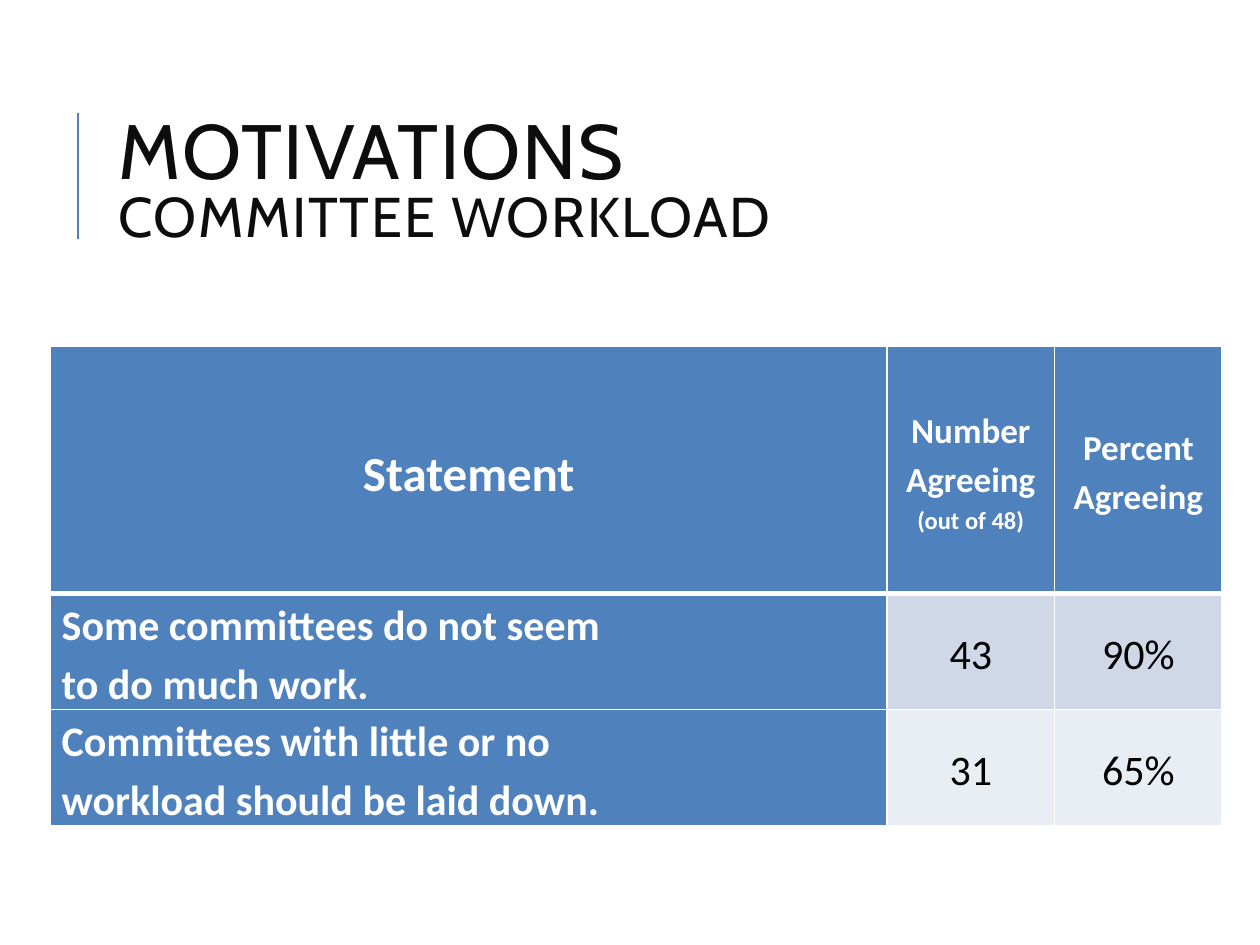
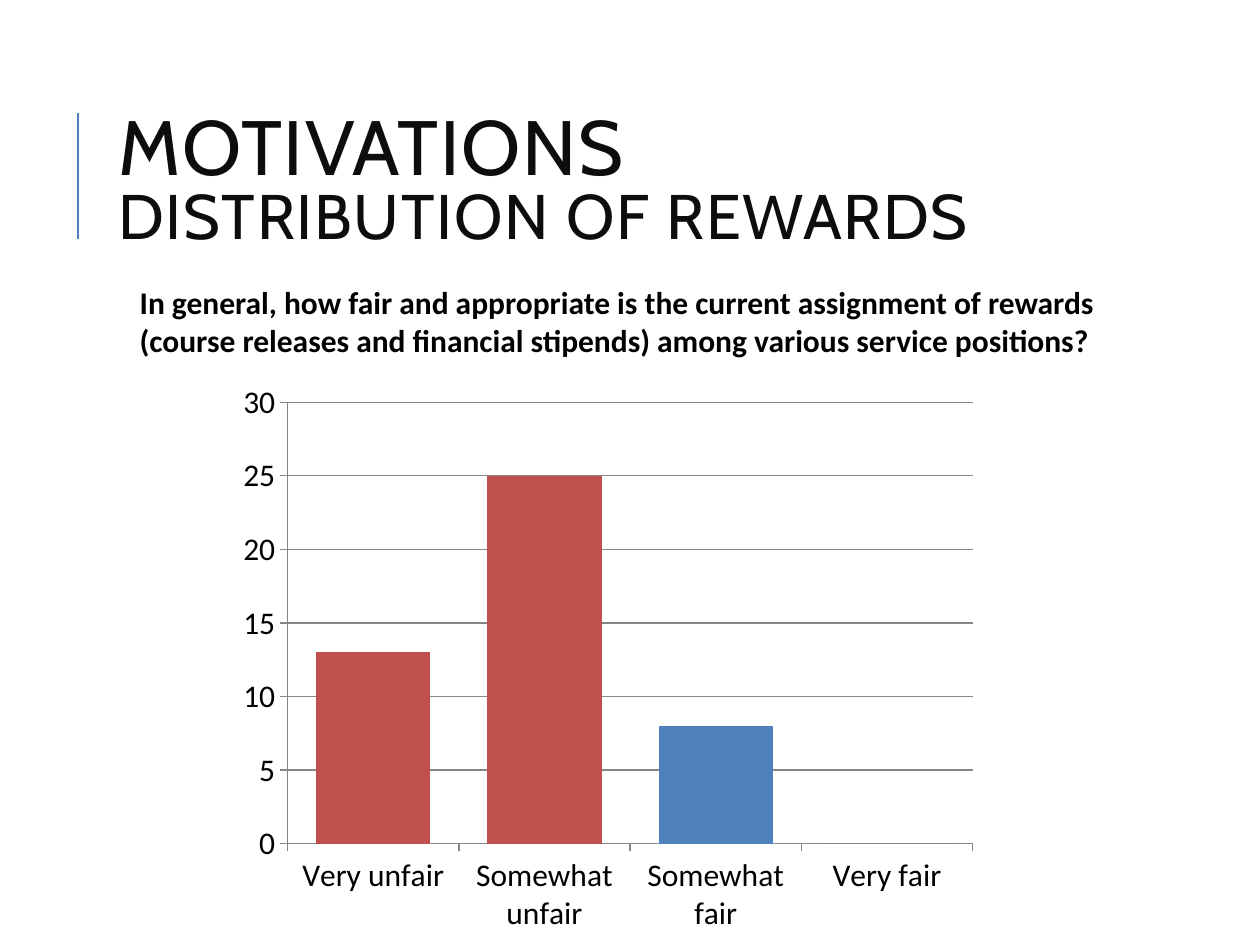
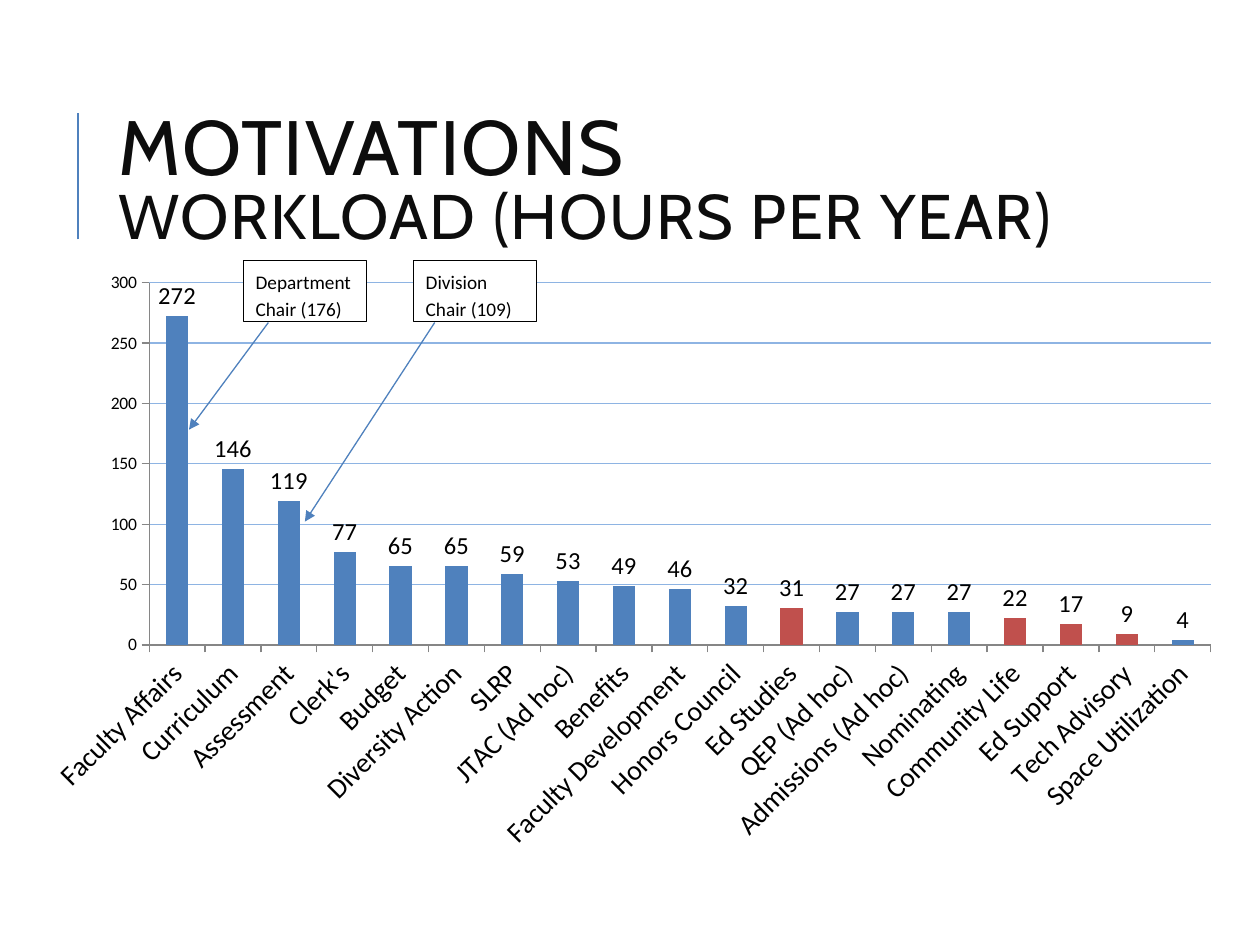
from lxml import etree
from pptx import Presentation
from pptx.chart.data import CategoryChartData
from pptx.dml.color import RGBColor
from pptx.enum import chart as ch, shapes as sh, text as tx
from pptx.oxml.ns import qn
from pptx.util import Inches, Pt

BLUE = RGBColor(0x4F, 0x81, 0xBD)
RED = RGBColor(0xC0, 0x50, 0x4D)
GRID = RGBColor(0x8E, 0xB4, 0xE3)
GRAY = RGBColor(0x86, 0x86, 0x86)
INK = RGBColor(0x0D, 0x0D, 0x0D)
BLACK = RGBColor(0, 0, 0)
WHITE = RGBColor(0xFF, 0xFF, 0xFF)
BANDS = [RGBColor(0xD0, 0xD8, 0xE8), RGBColor(0xE9, 0xED, 0xF4)]


def write(par, text, size, color=BLACK, bold=False, face="Calibri"):
    run = par.add_run()
    run.text = text
    font = run.font
    font.size, font.bold, font.name = Pt(size), bold, face
    font.color.rgb = color
    return run


def join(slide, start, end, width):
    """Draw a straight blue line without a shadow."""
    line = slide.shapes.add_connector(
        sh.MSO_CONNECTOR.STRAIGHT, *map(Inches, start + end))
    line.line.color.rgb = BLUE
    line.line.width = Pt(width)
    etree.SubElement(line._element.spPr, qn("a:effectLst"))
    return line


prs = Presentation()
prs.slide_width, prs.slide_height = Inches(10), Inches(7.5)

# Shared title and rule
slides = []
for topic, size in [("COMMITTEE WORKLOAD", 32),
                    ("DISTRIBUTION OF REWARDS", 36),
                    ("WORKLOAD (HOURS PER YEAR)", 36)]:
    slide = prs.slides.add_slide(prs.slide_layouts[6])
    join(slide, (0.62, 1.9), (0.62, 0.9), 1.5)
    box = slide.shapes.add_textbox(
        Inches(0.84), Inches(0.64), Inches(7.97), Inches(1.64))
    frame = box.text_frame
    frame.word_wrap = True
    frame.vertical_anchor = tx.MSO_ANCHOR.MIDDLE
    par = frame.paragraphs[0]
    par.line_spacing = 0.8
    head = write(par, "MOTIVATIONS", 44, INK, face="Cabin")
    par.add_line_break()
    tail = write(par, topic, size, INK, face="Cabin")
    for run in (head, tail):
        run.font._element.set("spc", "100")
    slides.append(slide)
work, fair, hours = slides

# Table of statements: each cell is a list of paragraphs, each a list of runs
rows = [
    [[[("Statement", 28)]],
     [[("Number Agreeing ", 20), ("(out of 48)", 14)]],
     [[("Percent Agreeing", 20)]]],
    [[[("Some committees do not seem", 24)], [("to do much work.", 24)]],
     [[("43", 24)]], [[("90%", 24)]]],
    [[[("Committees with little or no", 24)],
      [("workload should be laid down.", 24)]],
     [[("31", 24)]], [[("65%", 24)]]],
]
table = work.shapes.add_table(
    3, 3, Inches(0.4), Inches(2.75), Inches(9.3), Inches(3.8)).table
for col, width in zip(table.columns, (6.64, 1.33, 1.33)):
    col.width = Inches(width)
for row, height in zip(table.rows, (1.96, 0.92, 0.92)):
    row.height = Inches(height)
for r, row in enumerate(rows):
    for c, pars in enumerate(row):
        cell = table.cell(r, c)
        label = r == 0 or c == 0
        cell.fill.solid()
        cell.fill.fore_color.rgb = BLUE if label else BANDS[r - 1]
        cell.vertical_anchor = tx.MSO_ANCHOR.MIDDLE
        cell.margin_left = cell.margin_right = Inches(0.09)
        cell.margin_top = cell.margin_bottom = 0
        for i, runs in enumerate(pars):
            frame = cell.text_frame
            par = frame.add_paragraph() if i else frame.paragraphs[0]
            par.line_spacing = 1.15
            if r == 0 or c > 0:
                par.alignment = tx.PP_ALIGN.CENTER
            for text, size in runs:
                write(par, text, size, WHITE if label else BLACK, label)
        props = cell._tc.get_or_add_tcPr()
        for i, side in enumerate("LRTB"):
            thick = (r, side) in [(0, "B"), (1, "T")]
            edge = etree.Element(qn("a:ln" + side), w=str(Pt(3 if thick else 1)))
            fill = etree.SubElement(edge, qn("a:solidFill"))
            etree.SubElement(fill, qn("a:srgbClr"), val=str(WHITE))
            props.insert(i, edge)

# Column charts
rewards = {"Very unfair": 13, "Somewhat unfair": 25, "Somewhat fair": 8,
           "Very fair": 0}
load = {"Faculty Affairs": 272, "Curriculum": 146, "Assessment": 119,
        "Clerk's": 77, "Budget": 65, "Diversity Action": 65, "SLRP": 59,
        "JTAC (Ad hoc)": 53, "Benefits": 49, "Faculty Development": 46,
        "Honors Council": 32, "Ed Studies": 31, "QEP (Ad hoc)": 27,
        "Admissions (Ad hoc)": 27, "Nominating": 27, "Community Life": 22,
        "Ed Support": 17, "Tech Advisory": 9, "Space Utilization": 4}
charts = []
for slide, place, data, reds, gap, top, step, sizes, grid in [
        (fair, (1.81, 2.95, 6.03, 4.54), rewards, (0, 1), 50, 30, 5,
         (18, 18), GRAY),
        (hours, (0.23, 2.07, 9.57, 4.77), load, (11, 15, 16, 17), 150, 300, 50,
         (16, 10), GRID)]:
    source = CategoryChartData(number_format="0")
    source.categories = list(data)
    source.add_series("Series 1", list(data.values()))
    chart = slide.shapes.add_chart(
        ch.XL_CHART_TYPE.COLUMN_CLUSTERED, *map(Inches, place), source).chart
    chart.has_title = chart.has_legend = False
    chart.font.name, chart.font.size = "Calibri", Pt(10)
    chart.font.color.rgb = BLACK
    plot = chart.plots[0]
    plot.gap_width = gap
    plot.vary_by_categories = False
    bars = plot.series[0]
    bars.invert_if_negative = False
    bars.format.fill.solid()
    bars.format.fill.fore_color.rgb = BLUE
    for i in reds:
        fill = bars.points[i].format.fill
        fill.solid()
        fill.fore_color.rgb = RED
    for axis, size in zip((chart.category_axis, chart.value_axis), sizes):
        axis.tick_labels.font.size = Pt(size)
        axis.major_tick_mark = ch.XL_TICK_MARK.OUTSIDE
        axis.format.line.color.rgb = GRAY
    axis = chart.value_axis
    axis.minimum_scale, axis.maximum_scale, axis.major_unit = 0, top, step
    axis.has_major_gridlines = True
    axis.major_gridlines.format.line.color.rgb = grid
    axis.major_gridlines.format.line.width = Pt(0.75)
    charts.append(chart)

# Slanted names and values on the hours chart
plot = charts[1].plots[0]
plot.has_data_labels = True
labels = plot.data_labels
labels.show_value = True
labels.number_format, labels.number_format_is_linked = "0", False
labels.position = ch.XL_LABEL_POSITION.OUTSIDE_END
labels.font.size = Pt(14)
body = charts[1].category_axis._element.find(qn("c:txPr")).find(qn("a:bodyPr"))
body.set("rot", "-2700000")
body.set("vert", "horz")

# Question above the rewards chart
box = fair.shapes.add_textbox(
    Inches(1.01), Inches(2.2), Inches(7.98), Inches(1.01))
frame = box.text_frame
frame.word_wrap = False
write(frame.paragraphs[0], "In general, how fair and appropriate is the "
      "current assignment of rewards", 18, bold=True)
write(frame.add_paragraph(), "(course releases and financial stipends) among "
      "various service positions?", 18, bold=True)

# Chair callouts with arrows
for text, left, start, end in [
        ("Department Chair (176)", 1.93, (2.13, 2.56), (1.5, 3.41)),
        ("Division Chair (109)", 3.28, (3.45, 2.56), (2.42, 4.14))]:
    note = hours.shapes.add_shape(
        sh.MSO_SHAPE.RECTANGLE, Inches(left), Inches(2.07), Inches(0.98),
        Inches(0.48))
    note.shadow.inherit = False
    note.fill.solid()
    note.fill.fore_color.rgb = WHITE
    note.line.color.rgb = BLACK
    note.line.width = Pt(0.5)
    frame = note.text_frame
    frame.word_wrap = True
    frame.vertical_anchor = tx.MSO_ANCHOR.TOP
    par = frame.paragraphs[0]
    par.alignment = tx.PP_ALIGN.LEFT
    par.line_spacing, par.space_after = 1.15, Pt(10)
    write(par, text, 11)
    arrow = join(hours, start, end, 0.75)
    etree.SubElement(arrow.line._get_or_add_ln(), qn("a:tailEnd"),
                     type="triangle")

prs.save("out.pptx")
